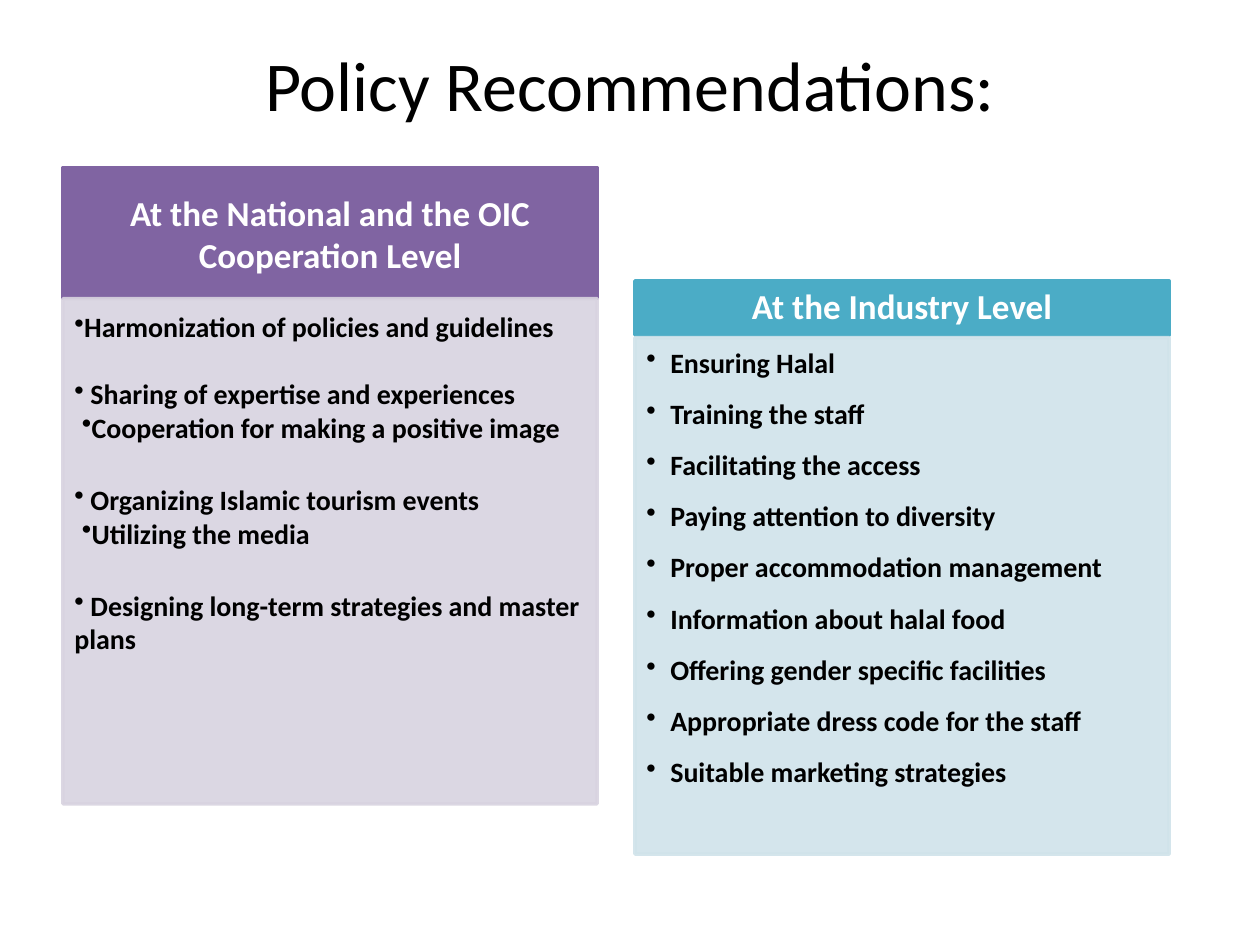
"""Build the policy recommendations slide with two headed bullet panels."""
from lxml.etree import SubElement
from pptx import Presentation
from pptx.dml.color import RGBColor
from pptx.enum.shapes import MSO_SHAPE as Shape
from pptx.enum.text import MSO_ANCHOR as Anchor, PP_ALIGN as Align
from pptx.oxml.ns import qn
from pptx.util import Inches, Pt


def color(value):
    return RGBColor.from_string(value)


def add_text(para, text, size, ink, bold=True):
    span = para.add_run()
    span.text = text
    span.font.name = "Calibri"
    span.font.size = Pt(size)
    span.font.bold = bold
    span.font.color.rgb = color(ink)


deck = Presentation()
deck.slide_width, deck.slide_height = Inches(10), Inches(7.5)
page = deck.slides.add_slide(deck.slide_layouts[6])

title = page.shapes.add_textbox(Inches(0.5), Inches(0.04), Inches(9), Inches(1.25))
title.text_frame.word_wrap = True
title.text_frame.vertical_anchor = Anchor.MIDDLE
title.text_frame.paragraphs[0].alignment = Align.CENTER
add_text(title.text_frame.paragraphs[0], "Policy Recommendations:", 40, "000000", False)

national_items = [
    ("Harmonization of policies and guidelines", 0, 0, 0),
    (" Sharing of expertise and experiences", 0, 0, 19),
    ("Cooperation for making a positive image", 0.06, 0, 0),
    (" Organizing Islamic tourism events", 0, 0, 22),
    ("Utilizing the media", 0.06, 0, 0),
    (" Designing long-term strategies and master plans", 0, 0, 22),
]
industry_names = [
    "Ensuring Halal",
    "Training the staff",
    "Facilitating the access",
    "Paying attention to diversity",
    "Proper accommodation management",
    "Information about halal food",
    "Offering gender specific facilities",
    "Appropriate dress code for the staff",
    "Suitable marketing strategies",
]
industry_items = [(name, 0.19, -0.19, 12 if row else 0) for row, name in enumerate(industry_names)]

columns = [
    (0.5, 1.33, 1.04, "8064A2", "At the National and the OIC Cooperation Level",
     2.37, 4.01, "D8D3E0", 1, national_items),
    (5.04, 2.23, 0.43, "4BACC6", "At the Industry Level",
     2.68, 4.1, "D0E3EA", 0.9, industry_items),
]

for left, head_top, head_height, head_fill, heading, top, height, fill, spacing, items in columns:
    boxes = []
    for box_top, box_height, box_fill, margins in [
        (head_top, head_height, head_fill, (0.16, 0.09, 0.16, 0.09)),
        (top, height, fill, (0.09, 0.09, 0.12, 0.14)),
    ]:
        box = page.shapes.add_shape(
            Shape.RECTANGLE, Inches(left), Inches(box_top), Inches(4.24), Inches(box_height))
        box.shadow.inherit = False
        box.fill.solid()
        box.fill.fore_color.rgb = color(box_fill)
        box.line.color.rgb = color(box_fill)
        box.line.width = Pt(2)
        frame = box.text_frame
        frame.word_wrap = True
        frame.margin_left, frame.margin_top, frame.margin_right, frame.margin_bottom = map(Inches, margins)
        boxes.append(box)
    header, panel = boxes

    header.text_frame.vertical_anchor = Anchor.MIDDLE
    para = header.text_frame.paragraphs[0]
    para.alignment = Align.CENTER
    para.line_spacing = spacing
    add_text(para, heading, 20, "FFFFFF")

    for tint in panel._element.spPr.iter(qn("a:srgbClr")):
        SubElement(tint, qn("a:alpha"), val="90000")
    frame = panel.text_frame
    frame.vertical_anchor = Anchor.TOP
    for row, (text, margin, indent, gap) in enumerate(items):
        para = frame.add_paragraph() if row else frame.paragraphs[0]
        para.alignment = Align.LEFT
        para.line_spacing = spacing
        para.space_before = Pt(gap)
        props = para._p.get_or_add_pPr()
        props.set("marL", str(Inches(margin)))
        props.set("indent", str(Inches(indent)))
        SubElement(props, qn("a:buChar"), char="•")
        add_text(para, text, 16, "000000")

deck.save("out.pptx")
